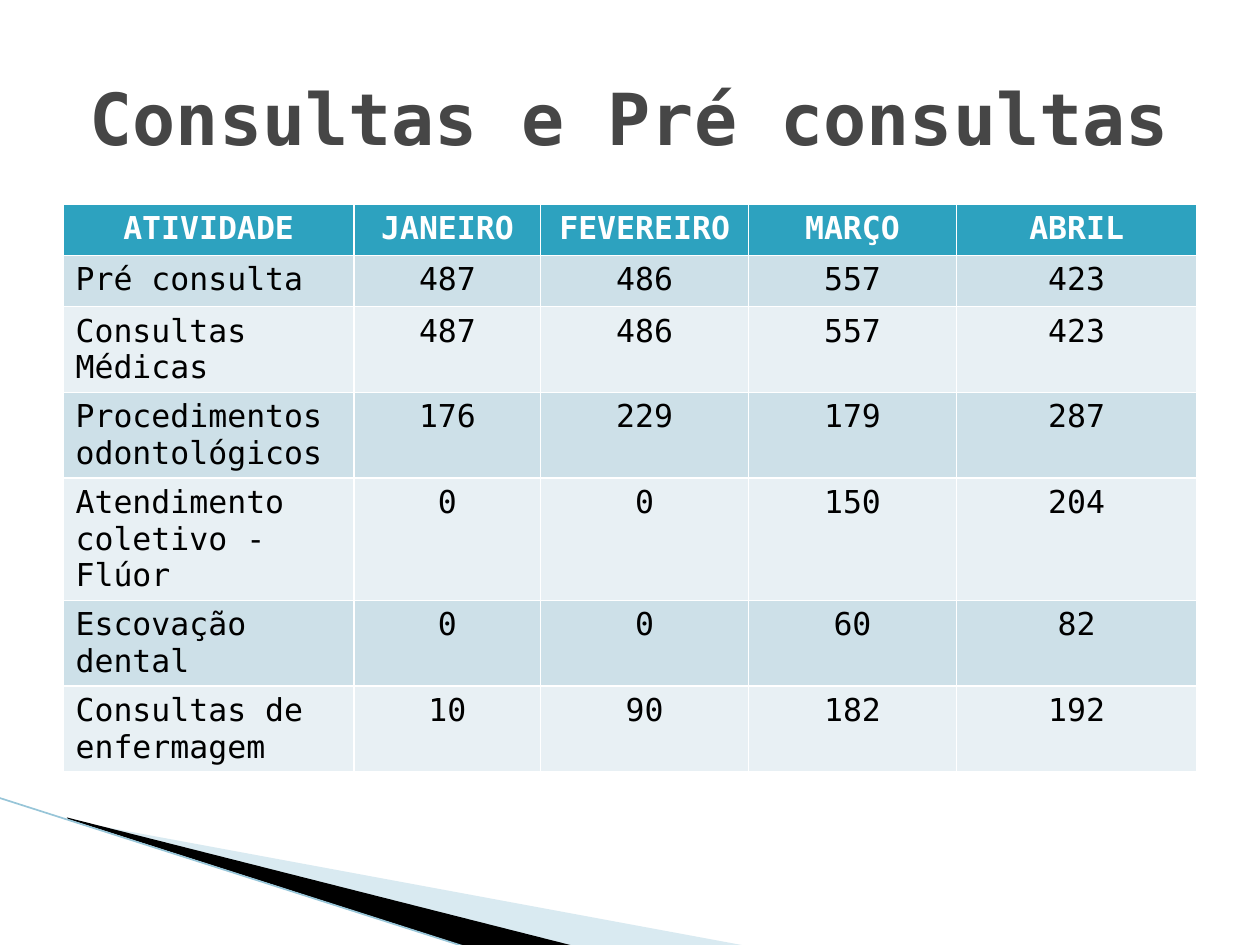
from lxml import etree
from pptx import Presentation
from pptx.dml.color import RGBColor
from pptx.enum.shapes import MSO_CONNECTOR
from pptx.enum.text import MSO_ANCHOR, PP_ALIGN
from pptx.oxml.ns import qn
from pptx.util import Cm, Pt

CENTER, LEFT = PP_ALIGN.CENTER, PP_ALIGN.LEFT
MIDDLE = MSO_ANCHOR.MIDDLE
STRAIGHT = MSO_CONNECTOR.STRAIGHT

FONT = "DejaVu Sans Mono"
COLORS = {
    "title": "464646",
    "header": "2DA2BF",
    "header_text": "FFFFFF",
    "body_text": "000000",
    "band_dark": "CDE0E8",
    "band_light": "E8F0F4",
    "pale_wedge": "A0CBDC",
    "black_wedge": "000000",
    "edge": "97C5D8",
}

TITLE_ONLY = 5
COLUMN_WIDTHS = [5.87, 3.76, 4.19, 4.19, 4.85]
ROW_HEIGHT = 1.03
ACTIVITIES = [
    ("ATIVIDADE", "JANEIRO", "FEVEREIRO", "MARÇO", "ABRIL"),
    ("Pré consulta", 487, 486, 557, 423),
    ("Consultas Médicas", 487, 486, 557, 423),
    ("Procedimentos odontológicos", 176, 229, 179, 287),
    ("Atendimento coletivo - Flúor", 0, 0, 150, 204),
    ("Escovação dental", 0, 0, 60, 82),
    ("Consultas de enfermagem", 10, 90, 182, 192),
]


def rgb(name):
    return RGBColor.from_string(COLORS[name])


def write_text(frame, text, *, size=18, color="body_text", bold=False, align=CENTER):
    paragraph = frame.paragraphs[0]
    paragraph.alignment = align
    run = paragraph.add_run()
    run.text = text
    font = run.font
    font.name, font.size, font.bold = FONT, Pt(size), bold
    font.color.rgb = rgb(color)


def add_wedge(slide, points, color, opacity=100):
    """Draw a borderless filled outline; points are in centimetres."""
    start, *rest = [(Cm(x), Cm(y)) for x, y in points]
    builder = slide.shapes.build_freeform(*start)
    builder.add_line_segments(rest, close=True)
    wedge = builder.convert_to_shape()
    wedge.shadow.inherit = False
    wedge.line.fill.background()
    wedge.fill.solid()
    wedge.fill.fore_color.rgb = rgb(color)
    if opacity < 100:
        color_element = wedge.fill._xPr.find(".//" + qn("a:srgbClr"))
        etree.SubElement(color_element, qn("a:alpha"), val=str(opacity * 1000))


def add_edge(slide, start, end):
    edge = slide.shapes.add_connector(STRAIGHT, *[Cm(v) for v in (*start, *end)])
    edge.line.color.rgb = rgb("edge")
    edge.line.width = Pt(0.95)
    etree.SubElement(edge._element.spPr, qn("a:effectLst"))


def add_corner_decoration(slide):
    add_wedge(slide, [(1.4, 16.54), (15.11, 19.08), (11.58, 19.08), (1.4, 16.51)],
              "pale_wedge", opacity=40)
    add_wedge(slide, [(1.35, 16.48), (11.61, 19.08), (9.45, 19.1), (1.37, 16.51)],
              "black_wedge")
    add_edge(slide, (-0.03, 16.08), (9.42, 19.1))


def add_activity_table(slide):
    row_count, column_count = len(ACTIVITIES), len(COLUMN_WIDTHS)
    table = slide.shapes.add_table(
        row_count, column_count, Cm(1.27), Cm(4.12),
        Cm(sum(COLUMN_WIDTHS)), Cm(ROW_HEIGHT * row_count)).table
    for column, width in zip(table.columns, COLUMN_WIDTHS):
        column.width = Cm(width)
    for r, values in enumerate(ACTIVITIES):
        is_header = r == 0
        band = "header" if is_header else "band_dark" if r % 2 else "band_light"
        for c, value in enumerate(values):
            cell = table.cell(r, c)
            cell.fill.solid()
            cell.fill.fore_color.rgb = rgb(band)
            write_text(cell.text_frame, str(value), bold=is_header,
                       color="header_text" if is_header else "body_text",
                       align=CENTER if is_header or c else LEFT)


def set_title(slide, text):
    title = slide.shapes.title
    title.left, title.top = Cm(1.27), Cm(0.76)
    title.width, title.height = Cm(22.86), Cm(3.18)
    title.text_frame.word_wrap = True
    title.text_frame.vertical_anchor = MIDDLE
    write_text(title.text_frame, text, size=41, color="title", bold=True)


def main():
    presentation = Presentation()
    presentation.slide_width, presentation.slide_height = Cm(25.4), Cm(19.05)
    slide = presentation.slides.add_slide(presentation.slide_layouts[TITLE_ONLY])
    add_corner_decoration(slide)
    add_activity_table(slide)
    set_title(slide, "Consultas e Pré consultas")
    presentation.save("out.pptx")


if __name__ == "__main__":
    main()
